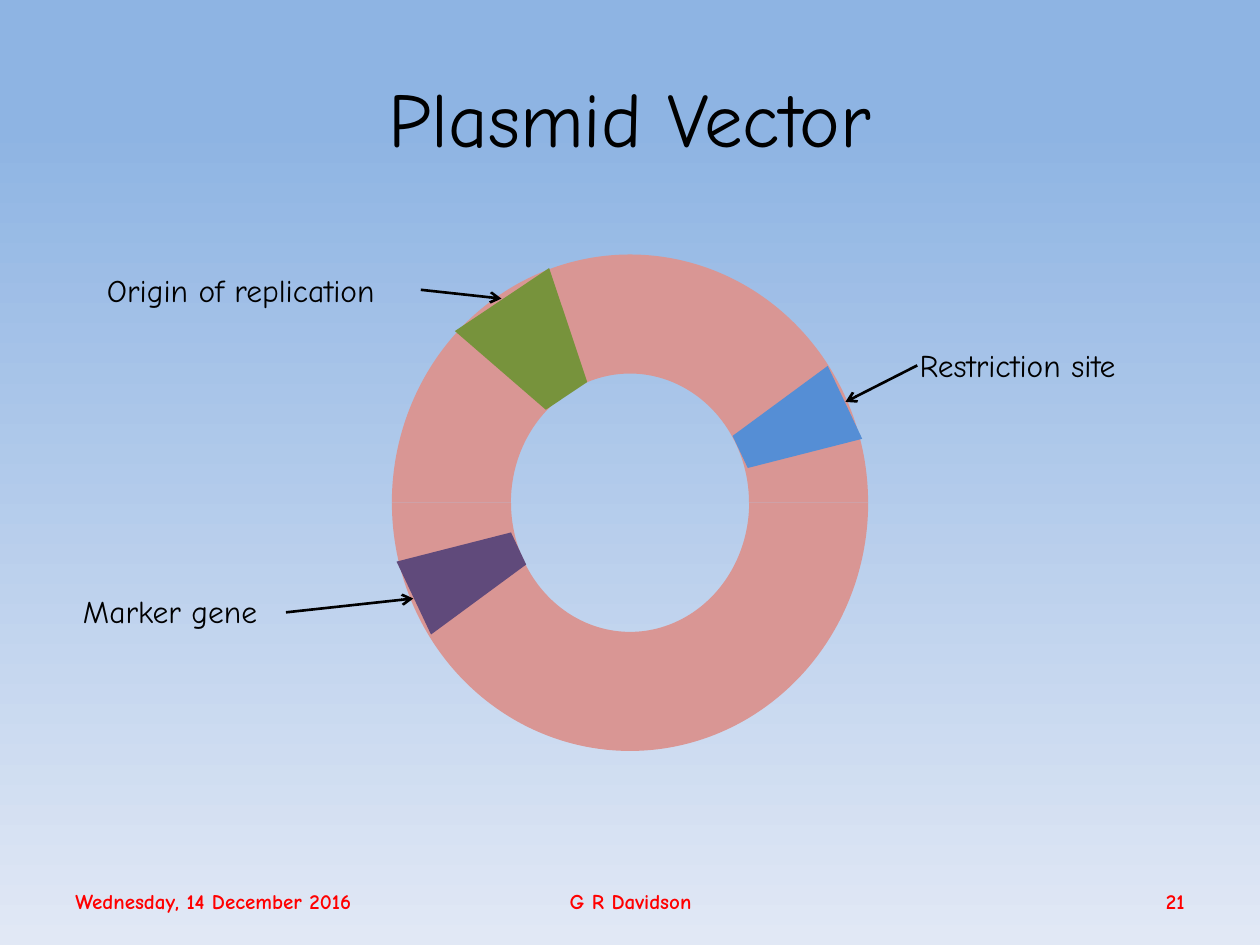
from lxml.etree import SubElement
from pptx import Presentation
from pptx.dml.color import RGBColor
from pptx.enum.shapes import MSO_CONNECTOR as Link, MSO_SHAPE as Shape
from pptx.enum.text import MSO_ANCHOR as Anchor, PP_ALIGN as Align
from pptx.oxml.ns import qn
from pptx.util import Inches, Pt

BLACK = RGBColor(0x00, 0x00, 0x00)
RED = RGBColor(0xFF, 0x00, 0x00)
PINK = RGBColor(0xD9, 0x96, 0x94)
BLUE = RGBColor(0x55, 0x8E, 0xD5)
GREEN = RGBColor(0x77, 0x93, 0x3C)
PURPLE = RGBColor(0x60, 0x4A, 0x7B)
SKY = RGBColor(0x8E, 0xB4, 0xE3)
MIST = RGBColor(0xE1, 0xE8, 0xF5)


class Deck:
    """Draws styled elements on the current slide."""

    font = "Comic Neue"

    def __init__(self, wide, high):
        self.prs = Presentation()
        self.prs.slide_width = Inches(wide)
        self.prs.slide_height = Inches(high)
        self.slide = self.prs.slides.add_slide(self.prs.slide_layouts[6])

    def shade(self, *stops):
        fill = self.slide.background.fill
        fill.gradient()
        fill.gradient_angle = 270
        for stop, (place, color) in zip(fill.gradient_stops, stops):
            stop.position = place
            stop.color.rgb = color

    def text(self, words, box, size, color=BLACK, bold=False,
             align=Align.LEFT, anchor=Anchor.MIDDLE, wrap=True):
        frame = self.slide.shapes.add_textbox(*map(Inches, box)).text_frame
        frame.word_wrap = wrap
        frame.vertical_anchor = anchor
        para = frame.paragraphs[0]
        para.alignment = align
        run = para.add_run()
        run.text = words
        font = run.font
        font.name, font.size, font.bold = self.font, Pt(size), bold
        font.color.rgb = color

    def shape(self, kind, box, color, turn=0, slant=None):
        shape = self.slide.shapes.add_shape(kind, *map(Inches, box))
        shape.shadow.inherit = False
        shape.fill.solid()
        shape.fill.fore_color.rgb = color
        shape.line.fill.background()
        shape.rotation = turn
        if slant is not None:
            shape.adjustments[0] = slant

    def arrow(self, start, end):
        link = self.slide.shapes.add_connector(
            Link.STRAIGHT, *map(Inches, start + end))
        link.line.color.rgb = BLACK
        link.line.width = Pt(1.5)
        props = link._element.spPr
        SubElement(props.find(qn("a:ln")), qn("a:tailEnd"), type="arrow")
        SubElement(props, qn("a:effectLst"))

    def label(self, words, box, start, end):
        self.text(words, box, 18, anchor=Anchor.TOP, wrap=False)
        self.arrow(start, end)

    def save(self):
        self.prs.save("out.pptx")


def main():
    deck = Deck(10, 7.5)
    deck.shade((0.13, SKY), (1, MIST))
    deck.text("Plasmid Vector", (0.5, 0.3, 9, 1.25), 44, align=Align.CENTER)

    for words, left, width, align in (
            ("Wednesday, 14 December 2016", 0.5, 3.32, Align.LEFT),
            ("G R Davidson", 3.42, 3.17, Align.CENTER),
            ("21", 7.17, 2.33, Align.RIGHT)):
        deck.text(words, (left, 6.95, width, 0.4), 12, RED, True, align)

    for turn in (0, 180):
        deck.shape(Shape.BLOCK_ARC, (3.11, 2.02, 3.78, 3.94), PINK, turn)

    for left, top, width, turn, color in (
            (5.97, 2.93, 0.64, 244.7, BLUE),
            (3.79, 2.3, 0.9, 146.2, GREEN),
            (3.38, 4.09, 0.64, 64.7, PURPLE)):
        deck.shape(Shape.TRAPEZOID, (left, top, width, 0.92), color, turn, 0.28)

    for words, left, top, width, start, end in (
            ("Origin of replication", 0.75, 2.1, 2.59, (3.34, 2.3), (3.98, 2.37)),
            ("Marker gene", 0.56, 4.65, 1.69, (2.27, 4.86), (3.28, 4.75)),
            ("Restriction site", 7.2, 2.7, 2.04, (7.28, 2.9), (6.71, 3.19))):
        deck.label(words, (left, top, width, 0.4), start, end)

    deck.save()


if __name__ == "__main__":
    main()
